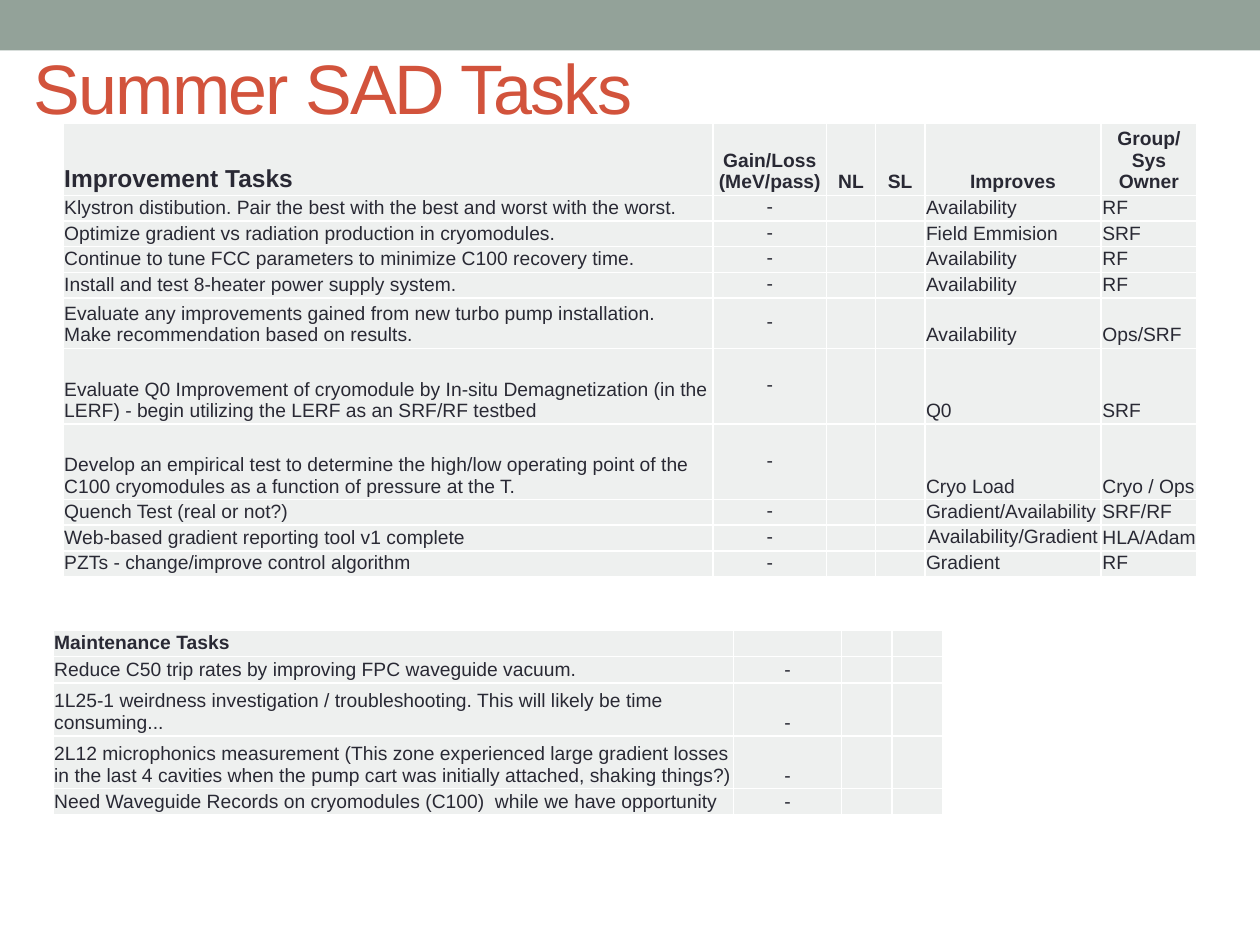
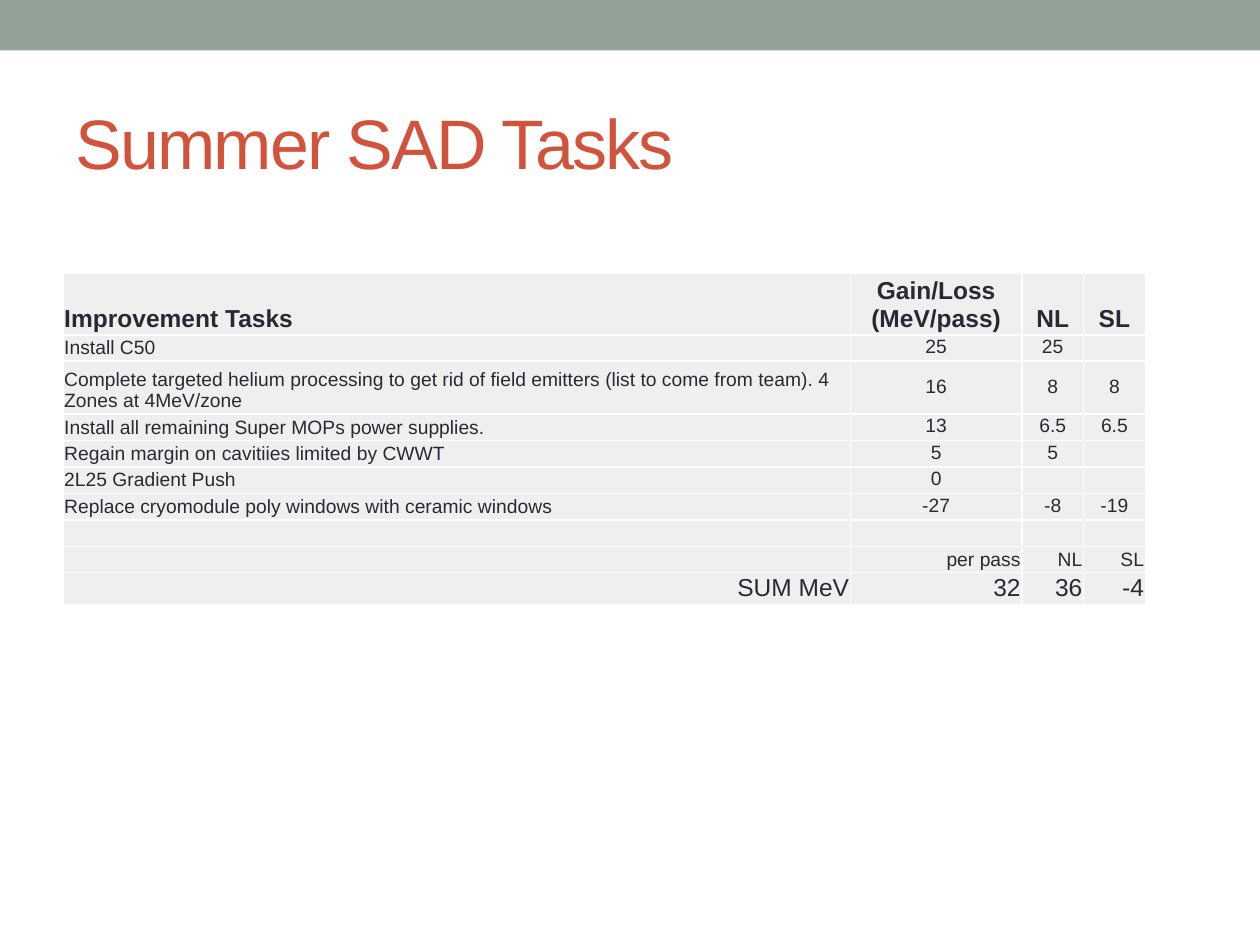
from collections import namedtuple

from lxml.etree import SubElement
from pptx import Presentation
from pptx.dml.color import RGBColor
from pptx.enum.shapes import MSO_SHAPE
from pptx.enum.text import MSO_ANCHOR, PP_ALIGN
from pptx.oxml.ns import qn
from pptx.util import Inches, Pt

FONT = "Arial"
BAND = "93A299"
TITLE = "D2533C"
INK = "292934"
CELL = "EEF0EF"
BORDER = "FFFFFF"

CellStyle = namedtuple("CellStyle", "size bold align anchor")
HEADING = CellStyle(14, True, PP_ALIGN.LEFT, MSO_ANCHOR.BOTTOM)
COLUMN_HEADING = HEADING._replace(align=PP_ALIGN.CENTER)
BODY = CellStyle(11, False, PP_ALIGN.LEFT, MSO_ANCHOR.BOTTOM)
FIGURE = BODY._replace(align=PP_ALIGN.CENTER, anchor=MSO_ANCHOR.MIDDLE)
TOTAL = BODY._replace(align=PP_ALIGN.RIGHT)

IMPROVEMENTS = [
    ("Klystron distibution. Pair the best with the best and worst with the worst.",
     "Availability", "RF"),
    ("Optimize gradient vs radiation production in cryomodules.",
     "Field Emmision", "SRF"),
    ("Continue to tune FCC parameters to minimize C100 recovery time.",
     "Availability", "RF"),
    ("Install and test 8-heater power supply system.", "Availability", "RF"),
    ("Evaluate any improvements gained from new turbo pump installation.  "
     "Make recommendation based on results.", "Availability", "Ops/SRF"),
    ("Evaluate Q0 Improvement of cryomodule by In-situ Demagnetization "
     "(in the LERF) - begin utilizing the LERF as an SRF/RF testbed", "Q0", "SRF"),
    ("Develop an empirical test to determine the high/low operating point of the "
     "C100 cryomodules as a function of pressure at the T.", "Cryo Load", "Cryo / Ops"),
    ("Quench Test (real or not?)", "Gradient/Availability", "SRF/RF"),
    ("Web-based gradient reporting tool v1 complete",
     "Availability/Gradient", "HLA/Adam"),
    ("PZTs - change/improve control algorithm", "Gradient", "RF"),
]

MAINTENANCE = [
    "Reduce C50 trip rates by improving FPC waveguide vacuum.",
    "1L25-1 weirdness investigation / troubleshooting. "
    "This will likely be time consuming...",
    "2L12 microphonics measurement (This zone experienced large gradient losses "
    "in the last 4 cavities when the pump cart was initially attached, shaking things?)",
    "Need Waveguide Records on cryomodules (C100)  while we have opportunity",
]

GAINS = [
    ("Improvement Tasks", "Gain/Loss (MeV/pass)", "NL", "SL"),
    ("Install C50", "25", "25", ""),
    ("Complete targeted helium processing to get rid of field emitters "
     "(list to come from team). 4 Zones at 4MeV/zone", "16", "8", "8"),
    ("Install all remaining Super MOPs power supplies.", "13", "6.5", "6.5"),
    ("Regain margin on cavitiies limited by CWWT", "5", "5", ""),
    ("2L25 Gradient Push", "0", "", ""),
    ("Replace cryomodule poly windows with ceramic windows", "-27", "-8", "-19"),
    ("", "", "", ""),
    ("", "per pass", "NL", "SL"),
    ("SUM MeV", "32", "36", "-4"),
]


def paint(fill, color):
    fill.solid()
    fill.fore_color.rgb = RGBColor.from_string(color)


def style_run(run, size, color, bold=False):
    run.font.name = FONT
    run.font.size = Pt(size)
    run.font.bold = bold
    run.font.color.rgb = RGBColor.from_string(color)


def add_task_slide(deck, title_left, title_top, title_height):
    slide = deck.slides.add_slide(deck.slide_layouts[6])
    band = slide.shapes.add_shape(MSO_SHAPE.RECTANGLE, 0, 0, deck.slide_width, Inches(0.4))
    band.shadow.inherit = False
    paint(band.fill, BAND)
    band.line.fill.background()

    title = slide.shapes.add_textbox(
        Inches(title_left), Inches(title_top), Inches(9), Inches(title_height))
    frame = title.text_frame
    frame.word_wrap = True
    frame.vertical_anchor = MSO_ANCHOR.MIDDLE
    frame.text = "Summer SAD Tasks"
    run = frame.paragraphs[0].runs[0]
    style_run(run, 40, TITLE)
    run.font._element.set("spc", "-100")
    return slide


def add_borders(cell):
    properties = cell._tc.get_or_add_tcPr()
    for side in ("a:lnL", "a:lnR", "a:lnT", "a:lnB"):
        line = SubElement(properties, qn(side), w=str(Pt(1)))
        fill = SubElement(line, qn("a:solidFill"))
        SubElement(fill, qn("a:srgbClr"), val=BORDER)


def fill_cell(cell, text, style):
    add_borders(cell)
    paint(cell.fill, CELL)
    cell.margin_left = cell.margin_right = Inches(0.01)
    if style.align == PP_ALIGN.LEFT:
        cell.margin_right = 0
    cell.margin_top = 0
    cell.margin_bottom = Inches(0.02)
    cell.vertical_anchor = style.anchor
    paragraph = cell.text_frame.paragraphs[0]
    paragraph.alignment = style.align
    if text:
        paragraph.text = text
        style_run(paragraph.runs[0], style.size, INK, style.bold)
    else:
        SubElement(paragraph._p, qn("a:endParaRPr"), sz=str(style.size * 100))


def add_task_table(slide, left, top, widths, heights, rows, style_for):
    table = slide.shapes.add_table(
        len(rows), len(widths), Inches(left), Inches(top),
        Inches(sum(widths)), Inches(sum(heights))).table
    for column, width in zip(table.columns, widths):
        column.width = Inches(width)
    for row, height in zip(table.rows, heights):
        row.height = Inches(height)
    for r, texts in enumerate(rows):
        for c, text in enumerate(texts):
            fill_cell(table.cell(r, c), text, style_for(r, c, text))


def improvement_style(row, column, text):
    if row == 0:
        return COLUMN_HEADING._replace(size=11) if column else HEADING
    if column == 1 or text == "Availability/Gradient":
        return FIGURE
    return BODY


def maintenance_style(row, column, text):
    if column:
        return BODY._replace(align=PP_ALIGN.CENTER)
    return BODY._replace(bold=row == 0)


def gain_style(row, column, text):
    if row == 0:
        return COLUMN_HEADING if column else HEADING
    if row == len(GAINS) - 1:
        return TOTAL._replace(size=14)
    if row == len(GAINS) - 2:
        return TOTAL
    return FIGURE if column else BODY


def main():
    deck = Presentation()
    deck.slide_width, deck.slide_height = Inches(10), Inches(7.5)

    tasks = add_task_slide(deck, 0.17, 0.3, 0.78)
    improvements = [("Improvement Tasks", "Gain/Loss (MeV/pass)", "NL", "SL",
                     "Improves", "Group/Sys Owner")]
    improvements += [(task, "-", "", "", improves, owner)
                     for task, improves, owner in IMPROVEMENTS]
    add_task_table(tasks, 0.5, 0.98, [5.16, 0.9, 0.39, 0.39, 1.4, 0.76],
                   [0.4] + [0.2] * 4 + [0.4, 0.6, 0.6] + [0.2] * 3,
                   improvements, improvement_style)
    maintenance = [("Maintenance Tasks", "", "", "")]
    maintenance += [(task, "-", "", "") for task in MAINTENANCE]
    add_task_table(tasks, 0.42, 5, [5.4, 0.86, 0.4, 0.4],
                   [0.21, 0.21, 0.42, 0.42, 0.21], maintenance, maintenance_style)

    gains = add_task_slide(deck, 0.5, 0.58, 1.08)
    add_task_table(gains, 0.5, 2.17, [6.25, 1.36, 0.49, 0.49],
                   [0.42, 0.21, 0.42] + [0.21] * 7, GAINS, gain_style)

    deck.save("out.pptx")


if __name__ == "__main__":
    main()
